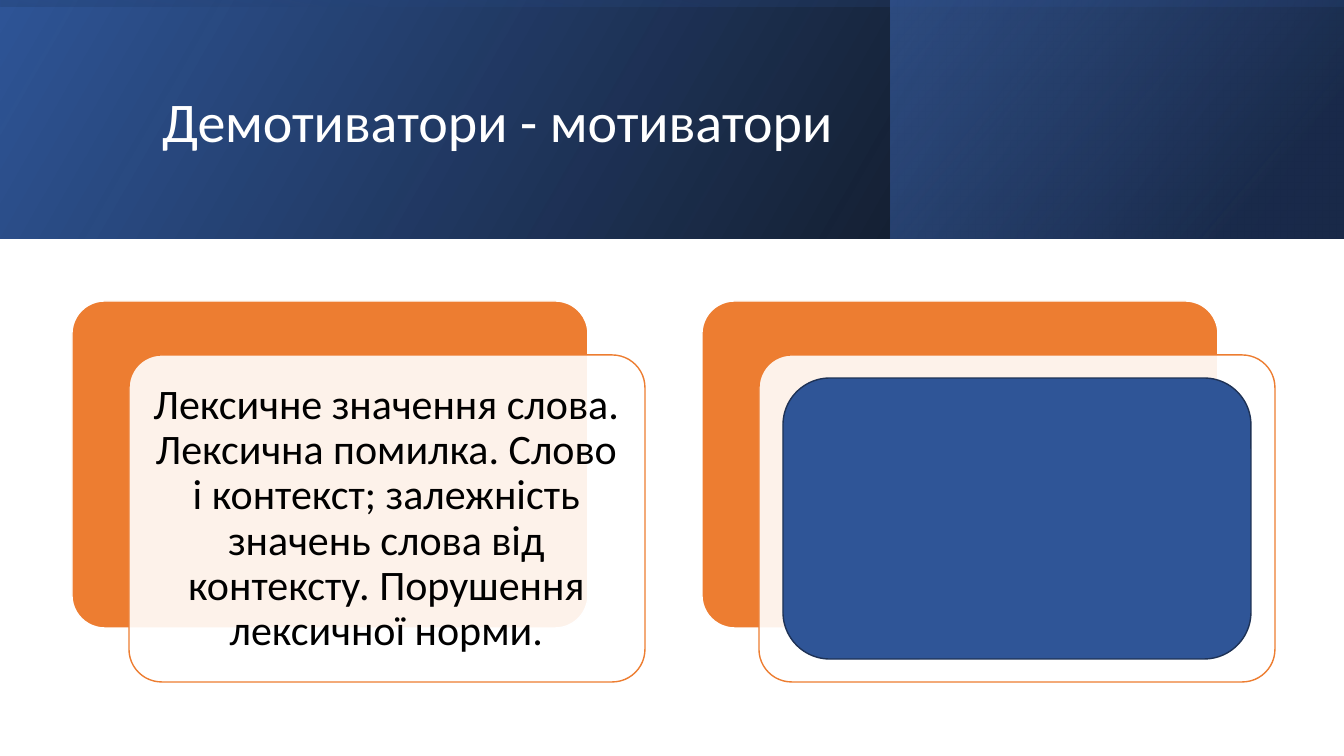
from lxml import etree
from pptx import Presentation
from pptx.dml.color import RGBColor
from pptx.enum import shapes, text
from pptx.oxml import ns
from pptx.util import Pt

PX = 914400 / 100.8
THEME = {
    "white": "FFFFFF", "ink": "000000", "blue": "2F5597", "edge": "1E3256",
    "navy": "203864", "sky": "4472C4", "orange": "ED7D31",
    "font": "Calibri", "title": 40, "body": 30,
}
KIND = shapes.MSO_SHAPE


def box(kind, at, fill=None, line=None):
    shape = deck.add_shape(kind, *[round(n * PX) for n in at])
    shape.shadow.inherit = False
    if fill:
        shape.fill.solid()
        shape.fill.fore_color.rgb = RGBColor.from_string(THEME[fill])
    if line:
        shape.line.color.rgb = RGBColor.from_string(THEME[line])
        shape.line.width = Pt(1)
    else:
        shape.line.fill.background()
    return shape


def write(frame, words, size, tone, align):
    form = {"word_wrap": True, "auto_size": text.MSO_AUTO_SIZE.NONE,
            "vertical_anchor": text.MSO_ANCHOR.MIDDLE}
    for key, val in form.items():
        setattr(frame, key, val)
    para = frame.paragraphs[0]
    para.alignment, para.line_spacing = align, 0.9
    run = para.add_run()
    run.text = words
    run.font.name, run.font.size = THEME["font"], Pt(THEME[size])
    run.font.color.rgb = RGBColor.from_string(THEME[tone])


prs = Presentation()
prs.slide_width, prs.slide_height = round(1344 * PX), round(756 * PX)
slide = prs.slides.add_slide(prs.slide_layouts[5])
deck = slide.shapes

# Header: three gradient layers; stops are (position, colour, opacity) in percent
WIDE, HIGH = 1344, 239
shift = (WIDE - HIGH) / 2
bands = [
    ((0, 0, WIDE, HIGH), 0, 330, [(0, "ink", 96), (100, "blue", 100)]),
    ((891, 0, 452, HIGH), 0, 320, [(19, "navy", 68), (100, "sky", 48)]),
    ((shift, -shift, HIGH, WIDE), 270, 350, [(23, "blue", 16), (99, "ink", 45)]),
]
for at, turn, angle, stops in bands:
    band = box(KIND.RECTANGLE, at)
    band.rotation = turn
    props = band._element.spPr
    props.find(ns.qn("a:xfrm")).set("flipH", "1")
    grad = etree.Element(ns.qn("a:gradFill"), rotWithShape="1")
    ramp = etree.SubElement(grad, ns.qn("a:gsLst"))
    for pos, tone, alpha in stops:
        stop = etree.SubElement(ramp, ns.qn("a:gs"), pos=str(pos * 1000))
        hue = etree.SubElement(stop, ns.qn("a:srgbClr"), val=THEME[tone])
        etree.SubElement(hue, ns.qn("a:alpha"), val=str(alpha * 1000))
    etree.SubElement(grad, ns.qn("a:lin"), ang=str(angle * 60000), scaled="0")
    props.find(ns.qn("a:prstGeom")).addnext(grad)

# Title, raised above the header
title = deck.title
for key, val in {"left": 152, "top": 38, "width": 1072, "height": 173}.items():
    setattr(title, key, round(val * PX))
write(title.text_frame, "Демотиватори - мотиватори", "title", "white", text.PP_ALIGN.LEFT)
deck._spTree.append(title._element)

# Cards: an orange back and a translucent front, offset down and right
for left in (72, 702):
    back = box(KIND.ROUNDED_RECTANGLE, (left, 301, 516, 327), "orange", "white")
    front = box(KIND.ROUNDED_RECTANGLE, (left + 57, 355, 516, 327), "white", "orange")
    for card in (back, front):
        card.adjustments[0] = 0.1
    hue = front._element.spPr.find(".//" + ns.qn("a:srgbClr"))
    etree.SubElement(hue, ns.qn("a:alpha"), val="90000")

    # Left card holds the text
    if left == 72:
        note = deck.add_textbox(*[round(n * PX) for n in (138, 365, 497, 308)])
        for side in ("left", "top", "right", "bottom"):
            setattr(note.text_frame, "margin_" + side, round(12 * PX))
        write(note.text_frame,
              "Лексичне значення слова. Лексична помилка. Слово і контекст; "
              "залежність значень слова від контексту. Порушення лексичної норми.",
              "body", "ink", text.PP_ALIGN.CENTER)

# Blue panel on the right card
box(KIND.ROUNDED_RECTANGLE, (783, 378, 468, 281), "blue", "edge")

prs.save("out.pptx")
